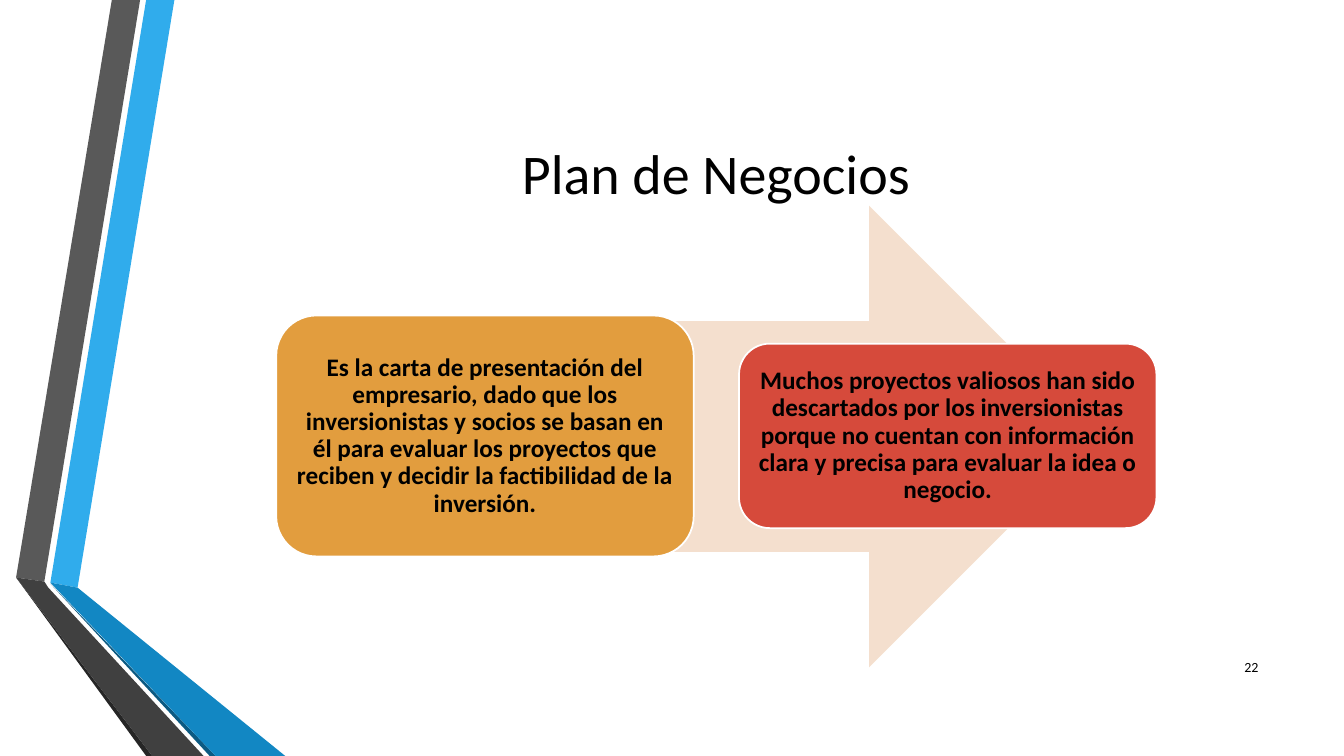
import dataclasses

import pptx
import pptx.dml.color
import pptx.enum.shapes
import pptx.enum.text
import pptx.util

Inches = pptx.util.Inches
Shape = pptx.enum.shapes.MSO_SHAPE
Align = pptx.enum.text.PP_ALIGN


@dataclasses.dataclass(frozen=True)
class Theme:
    font: str = "Calibri"
    ink: str = "000000"
    edge: str = "FFFFFF"
    sky: str = "30ACEC"
    blue: str = "1287C3"
    navy: str = "0C5A82"
    gray: str = "595959"
    dark: str = "404040"
    black: str = "262626"
    arrow: str = "F4DFCE"
    gold: str = "E29D3E"
    red: str = "D64A3B"
    title: int = 40
    body: int = 18
    small: int = 10


THEME = Theme()

BANDS = [
    (THEME.sky, [(0.5, 5.78), (0.77, 5.83), (1.73, 0), (1.45, 0)]),
    (THEME.gray, [(1.39, 0), (1.11, 0), (0.16, 5.73), (0.44, 5.77)]),
    (THEME.black, [(0.16, 5.73), (1.45, 7.5), (1.51, 7.5)]),
    (THEME.navy, [(0.5, 5.79), (2.08, 7.5), (2.14, 7.5)]),
    (THEME.blue, [(0.5, 5.78), (2.14, 7.5), (2.83, 7.5), (0.77, 5.83)]),
    (THEME.dark, [(2.02, 7.5), (0.48, 5.83), (0.44, 5.77), (0.16, 5.73), (1.51, 7.5)]),
]

CARDS = [
    (2.74, 3.13, 2.39, THEME.gold,
     "Es la carta de presentación del empresario, dado que los inversionistas "
     "y socios se basan en él para evaluar los proyectos que reciben y decidir "
     "la factibilidad de la inversión."),
    (7.33, 3.41, 1.83, THEME.red,
     "Muchos proyectos valiosos han sido descartados por los inversionistas "
     "porque no cuentan con información clara y precisa para evaluar la idea o "
     "negocio."),
]


def color(code):
    return pptx.dml.color.RGBColor.from_string(code)


def paint(shape, fill):
    shape.shadow.inherit = False
    shape.fill.solid()
    shape.fill.fore_color.rgb = color(fill)
    shape.line.fill.background()


def write(shape, text, size, align, bold=False):
    frame = shape.text_frame
    frame.text = text
    frame.word_wrap = True
    frame.vertical_anchor = pptx.enum.text.MSO_ANCHOR.MIDDLE
    line = frame.paragraphs[0]
    line.alignment = align
    font = line.runs[0].font
    font.name = THEME.font
    font.size = pptx.util.Pt(size)
    font.bold = bold
    font.color.rgb = color(THEME.ink)


def add_band(slide, fill, points):
    spots = [(Inches(x), Inches(y)) for x, y in points]
    pen = slide.shapes.build_freeform(*spots[0])
    pen.add_line_segments(spots[1:], close=True)
    paint(pen.convert_to_shape(), fill)


def add_form(slide, kind, box, fill):
    form = slide.shapes.add_shape(kind, *map(Inches, box))
    paint(form, fill)
    return form


def add_card(slide, left, top, height, fill, text):
    card = add_form(slide, Shape.ROUNDED_RECTANGLE, (left, top, 4.14, height), fill)
    card.line.color.rgb = color(THEME.edge)
    card.line.width = pptx.util.Pt(1.25)
    write(card, text, THEME.body, Align.CENTER, bold=True)
    frame = card.text_frame
    frame.margin_left = frame.margin_right = Inches(0.07)
    frame.margin_top = frame.margin_bottom = Inches(0.07)
    frame.paragraphs[0].line_spacing = 0.9


def add_label(slide, box, text, size, align):
    label = slide.shapes.add_textbox(*map(Inches, box))
    write(label, text, size, align)


def main():
    deck = pptx.Presentation()
    deck.slide_width = Inches(13.33)
    deck.slide_height = Inches(7.5)
    slide = deck.slides.add_slide(deck.slide_layouts[6])
    for fill, points in BANDS:
        add_band(slide, fill, points)
    add_label(slide, (1.62, 0.75, 10.96, 1.92), "Plan de Negocios", THEME.title, Align.CENTER)
    add_form(slide, Shape.RIGHT_ARROW, (3.3, 2.04, 7.61, 4.58), THEME.arrow)
    for card in CARDS:
        add_card(slide, *card)
    add_label(slide, (11.98, 6.42, 0.6, 0.4), "22", THEME.small, Align.RIGHT)
    deck.save("out.pptx")


if __name__ == "__main__":
    main()
